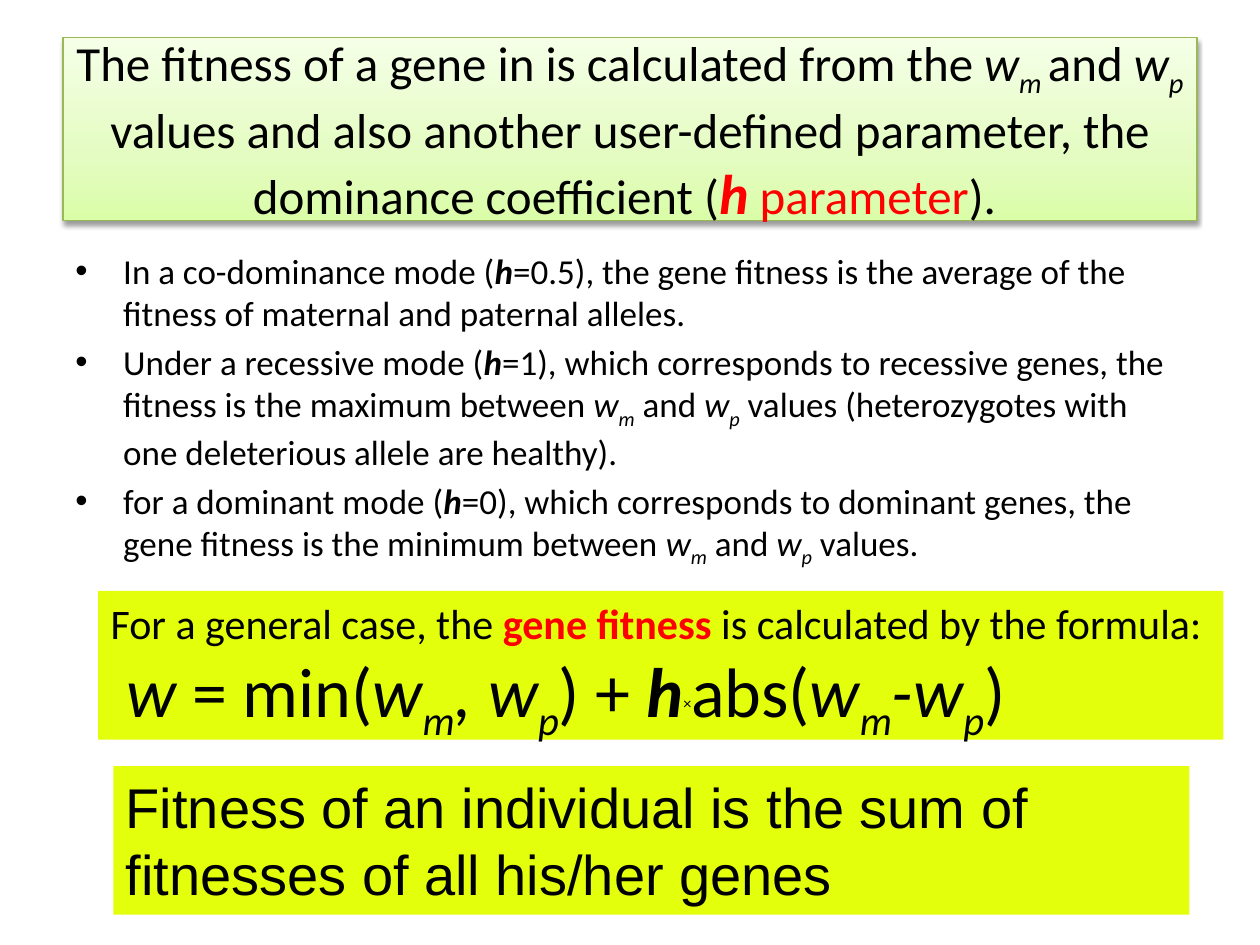
from pptx import Presentation
from pptx.dml.color import RGBColor
from pptx.enum.shapes import MSO_SHAPE
from pptx.enum.text import MSO_ANCHOR, MSO_AUTO_SIZE, PP_ALIGN
from pptx.oxml import parse_xml
from pptx.oxml.ns import nsdecls, qn
from pptx.util import Inches, Pt

RECTANGLE = MSO_SHAPE.RECTANGLE
MIDDLE, TOP = MSO_ANCHOR.MIDDLE, MSO_ANCHOR.TOP
FIT_SHAPE = MSO_AUTO_SIZE.SHAPE_TO_FIT_TEXT
CENTER, LEFT = PP_ALIGN.CENTER, PP_ALIGN.LEFT

BLACK = RGBColor(0x00, 0x00, 0x00)
RED = RGBColor(0xFF, 0x00, 0x00)
YELLOW = RGBColor(0xE3, 0xFF, 0x0C)
GREEN_LINE = RGBColor(0x98, 0xB9, 0x55)
GREEN_STOPS = [
    (0, RGBColor(0xDA, 0xFD, 0xA7)),
    (35, RGBColor(0xE4, 0xFC, 0xC2)),
    (100, RGBColor(0xF5, 0xFF, 0xE7)),
]

ITALIC = {"italic": True}
SUBSCRIPT = {"italic": True, "baseline": -25}
STRONG = {"bold": True, "italic": True}
W_MATERNAL = [("w", ITALIC), ("m", SUBSCRIPT)]
W_PATERNAL = [("w", ITALIC), ("p", SUBSCRIPT)]
H_SYMBOL = ("h", STRONG)

TITLE = [
    "The fitness of a gene in is calculated from the ",
    ("w", ITALIC), ("m ", SUBSCRIPT), "and ", *W_PATERNAL,
    " values and also another user-defined parameter, the dominance coefficient (",
    ("h", {**STRONG, "size": 32, "color": RED}),
    (" ", STRONG),
    ("parameter", {"color": RED}),
    "). ",
]
MODES = [
    ["In a co-dominance mode (", H_SYMBOL,
     "=0.5), the gene fitness is the average of the fitness of maternal and paternal alleles."],
    ["Under a recessive mode (", H_SYMBOL,
     "=1), which corresponds to recessive genes, the fitness is the maximum between ",
     *W_MATERNAL, " and ", *W_PATERNAL,
     " values (heterozygotes with one deleterious allele are healthy)."],
    ["for a dominant mode (", H_SYMBOL,
     "=0), which corresponds to dominant genes, the gene fitness is the minimum between ",
     *W_MATERNAL, " and ", *W_PATERNAL, " values."],
]
FORMULA_INTRO = [
    "For a general case, the ",
    ("gene fitness ", {"bold": True, "color": RED}),
    "is calculated by the formula:",
]
FORMULA = [
    " ", ("w", ITALIC), " = min(", *W_MATERNAL, (", ", ITALIC), *W_PATERNAL, ") + ",
    H_SYMBOL, ("×", {"size": 16, "baseline": 30}), "abs(",
    *W_MATERNAL, ("-", ITALIC), *W_PATERNAL, ")",
]
SUMMARY = ["Fitness of an individual is the sum of fitnesses of all his/her genes"]


def add_text(paragraph, text, size=20, font="Calibri", color=BLACK,
             bold=False, italic=False, baseline=0):
    run = paragraph.add_run()
    run.text = text
    run.font.name = font
    run.font.size = Pt(size)
    run.font.color.rgb = color
    run.font.bold = bold
    run.font.italic = italic
    if baseline:
        run._r.get_or_add_rPr().set("baseline", str(baseline * 1000))


def fill_paragraph(paragraph, pieces, align=LEFT, **defaults):
    paragraph.alignment = align
    for piece in pieces:
        text, changes = (piece, {}) if isinstance(piece, str) else piece
        add_text(paragraph, text, **{**defaults, **changes})


def add_box(slide, box, anchor=TOP):
    shape = slide.shapes.add_shape(RECTANGLE, *map(Inches, box))
    shape.shadow.inherit = False
    shape.line.fill.background()
    shape.text_frame.word_wrap = True
    shape.text_frame.vertical_anchor = anchor
    return shape


def add_title(slide, box):
    shape = add_box(slide, box, MIDDLE)
    properties = shape._element.spPr
    stops = "".join(
        f'<a:gs pos="{position * 1000}"><a:srgbClr val="{color}"/></a:gs>'
        for position, color in GREEN_STOPS
    )
    properties.find(qn("a:prstGeom")).addnext(parse_xml(
        f'<a:gradFill {nsdecls("a")} rotWithShape="1"><a:gsLst>{stops}</a:gsLst>'
        '<a:lin ang="16200000" scaled="0"/></a:gradFill>'
    ))
    properties.find(qn("a:effectLst")).append(parse_xml(
        f'<a:outerShdw {nsdecls("a")} blurRad="{Pt(3.1)}" dist="{Pt(1.6)}" '
        'dir="5400000" rotWithShape="0"><a:srgbClr val="000000">'
        '<a:alpha val="38000"/></a:srgbClr></a:outerShdw>'
    ))
    shape.line.color.rgb = GREEN_LINE
    shape.line.width = Pt(0.75)
    fill_paragraph(shape.text_frame.paragraphs[0], TITLE, CENTER, size=28)


def add_modes(slide, box):
    frame = slide.shapes.add_textbox(*map(Inches, box)).text_frame
    frame.word_wrap = True
    for index, pieces in enumerate(MODES):
        paragraph = frame.add_paragraph() if index else frame.paragraphs[0]
        paragraph.space_before = Pt(4)
        fill_paragraph(paragraph, pieces)
        properties = paragraph._p.get_or_add_pPr()
        properties.set("marL", str(Inches(0.38)))
        properties.set("indent", str(-Inches(0.38)))
        properties.append(parse_xml(f'<a:buFont {nsdecls("a")} typeface="Arial"/>'))
        properties.append(parse_xml(f'<a:buChar {nsdecls("a")} char="•"/>'))


def add_callout(slide, box):
    shape = add_box(slide, box)
    shape.fill.solid()
    shape.fill.fore_color.rgb = YELLOW
    shape.text_frame.auto_size = FIT_SHAPE
    return shape.text_frame


def add_formula(slide, box):
    frame = add_callout(slide, box)
    fill_paragraph(frame.paragraphs[0], FORMULA_INTRO, size=24)
    fill_paragraph(frame.add_paragraph(), FORMULA, size=40)


def add_summary(slide, box):
    frame = add_callout(slide, box)
    fill_paragraph(frame.paragraphs[0], SUMMARY, size=32, font="Arial")


def main():
    presentation = Presentation()
    presentation.slide_width = Inches(10)
    presentation.slide_height = Inches(7.5)
    slide = presentation.slides.add_slide(presentation.slide_layouts[6])
    add_title(slide, (0.5, 0.3, 9, 1.45))
    add_modes(slide, (0.5, 1.93, 9, 2.76))
    add_formula(slide, (0.78, 4.69, 8.93, 1.18))
    add_summary(slide, (0.9, 6.08, 8.54, 1.18))
    presentation.save("out.pptx")


if __name__ == "__main__":
    main()
